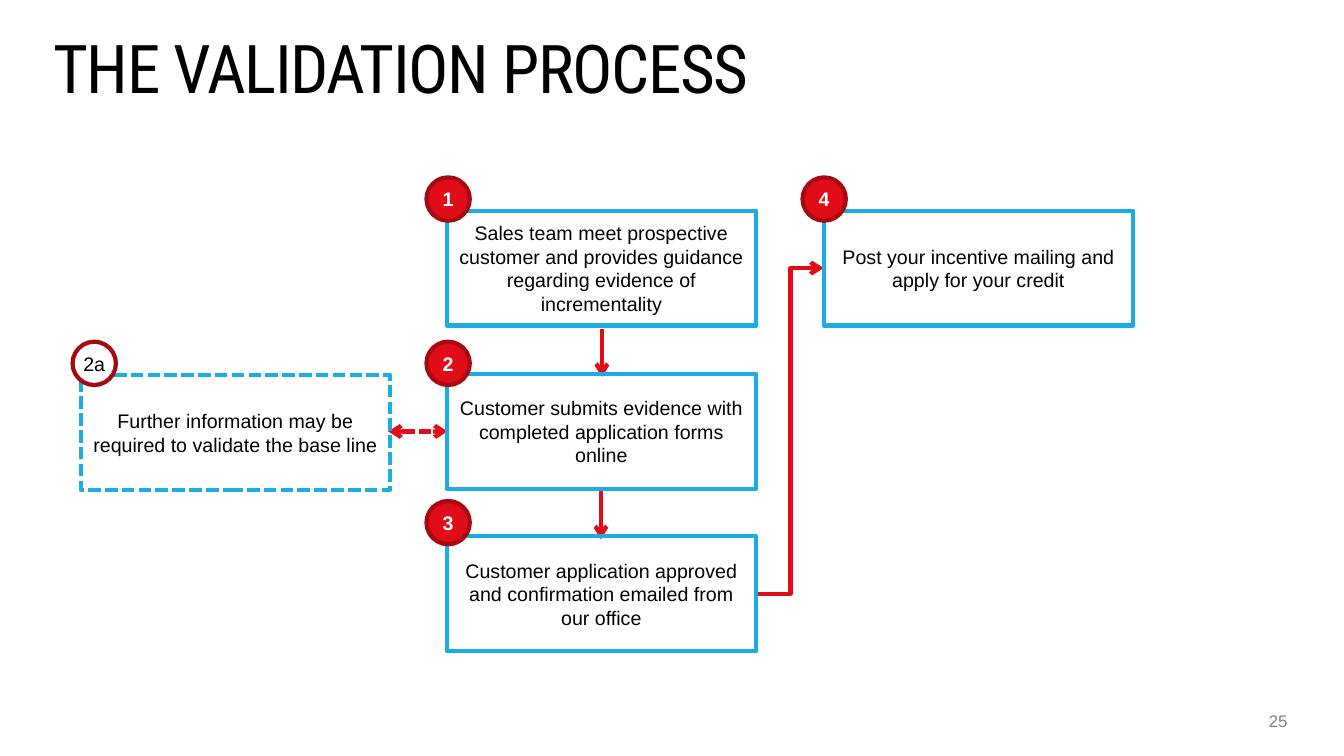
from dataclasses import dataclass

from lxml import etree
from pptx import Presentation
from pptx.dml.color import RGBColor
from pptx.enum.dml import MSO_LINE
from pptx.enum.shapes import MSO_CONNECTOR, MSO_SHAPE
from pptx.enum.text import MSO_ANCHOR, PP_ALIGN
from pptx.oxml.ns import qn
from pptx.util import Inches, Pt

COLORS = {
    "black": "000000",
    "white": "FFFFFF",
    "gray": "808080",
    "blue": "1BACE4",
    "red": "E20C18",
    "dark_red": "A70912",
}
BOX_WIDTH, BOX_HEIGHT, BADGE_SIZE = 3.07, 1.14, 0.43
LINE_WIDTH = Pt(3)


@dataclass
class Step:
    label: str
    text: str
    left: float
    top: float
    badge_left: float
    badge_top: float
    optional: bool = False


@dataclass
class Arrow:
    start: tuple[float, float]
    end: tuple[float, float]
    kind: MSO_CONNECTOR = MSO_CONNECTOR.STRAIGHT
    two_way: bool = False


STEPS = [
    Step("1", "Sales team meet prospective customer and provides guidance "
         "regarding evidence of incrementality", 4.43, 2.09, 4.23, 1.76),
    Step("2", "Customer submits evidence with completed application forms online",
         4.43, 3.71, 4.23, 3.39),
    Step("3", "Customer application approved and confirmation emailed from our office",
         4.43, 5.32, 4.23, 4.97),
    Step("2a", "Further information may be required to validate the base line",
         0.8, 3.72, 0.72, 3.39, optional=True),
    Step("4", "Post your incentive mailing and apply for your credit",
         8.17, 2.09, 7.96, 1.76),
]
ARROWS = [
    Arrow((5.97, 3.26), (5.97, 3.74)),
    Arrow((5.96, 4.86), (5.96, 5.35)),
    Arrow((3.85, 4.28), (4.44, 4.28), two_way=True),
    Arrow((7.51, 5.89), (8.17, 2.66), MSO_CONNECTOR.ELBOW),
]


def color(name: str) -> RGBColor:
    return RGBColor.from_string(COLORS[name])


def write(box, text: str, size: int, ink: str, align: PP_ALIGN,
          font: str = "Arial", bold: bool = False):
    frame = box.text_frame
    frame.word_wrap = True
    para = frame.paragraphs[0]
    para.text = text
    para.alignment = align
    para.font.name = font
    para.font.size = Pt(size)
    para.font.bold = bold
    para.font.color.rgb = color(ink)
    return para


def add_label(page, left: float, top: float, width: float, height: float):
    box = page.shapes.add_textbox(Inches(left), Inches(top), Inches(width), Inches(height))
    frame = box.text_frame
    frame.margin_left = frame.margin_right = frame.margin_top = frame.margin_bottom = 0
    return box


def add_outlined(page, kind: MSO_SHAPE, left: float, top: float, width: float,
                 height: float, outline: str):
    shape = page.shapes.add_shape(kind, Inches(left), Inches(top), Inches(width), Inches(height))
    shape.shadow.inherit = False
    shape.line.color.rgb = color(outline)
    shape.line.width = LINE_WIDTH
    shape.text_frame.vertical_anchor = MSO_ANCHOR.MIDDLE
    return shape


def add_step(page, step: Step) -> None:
    box = add_outlined(page, MSO_SHAPE.RECTANGLE, step.left, step.top,
                       BOX_WIDTH, BOX_HEIGHT, "blue")
    box.fill.background()
    write(box, step.text, 14, "black", PP_ALIGN.CENTER)
    badge = add_outlined(page, MSO_SHAPE.OVAL, step.badge_left, step.badge_top,
                         BADGE_SIZE, BADGE_SIZE, "dark_red")
    badge.fill.solid()
    badge.fill.fore_color.rgb = color("white" if step.optional else "red")
    badge.text_frame.margin_left = badge.text_frame.margin_right = 0
    write(badge, step.label, 14, "black" if step.optional else "white",
          PP_ALIGN.CENTER, bold=not step.optional)
    if step.optional:
        box.line.dash_style = MSO_LINE.SQUARE_DOT


def add_arrow(page, arrow: Arrow) -> None:
    points = [Inches(value) for value in (*arrow.start, *arrow.end)]
    connector = page.shapes.add_connector(arrow.kind, *points)
    connector.line.color.rgb = color("red")
    connector.line.width = LINE_WIDTH
    if arrow.two_way:
        connector.line.dash_style = MSO_LINE.SQUARE_DOT
    properties = connector.element.spPr
    outline = properties.find(qn("a:ln"))
    for end in ("a:headEnd", "a:tailEnd") if arrow.two_way else ("a:tailEnd",):
        etree.SubElement(outline, qn(end), type="arrow")
    etree.SubElement(properties, qn("a:effectLst"))


def main() -> None:
    """Build the validation process slide."""
    deck = Presentation()
    deck.slide_width, deck.slide_height = Inches(13.33), Inches(7.5)
    page = deck.slides.add_slide(deck.slide_layouts[6])

    title = write(add_label(page, 0.53, 0.45, 12.2, 0.52), "THE VALIDATION PROCESS",
                  48, "black", PP_ALIGN.LEFT, font="Roboto Condensed")
    title.line_spacing = Pt(44)
    for span in title.runs:
        span.font._element.set("spc", "-100")
    write(add_label(page, 12.3, 7.05, 0.47, 0.2), "25", 12, "gray", PP_ALIGN.RIGHT)

    for arrow in ARROWS:
        add_arrow(page, arrow)
    for step in STEPS:
        add_step(page, step)
    deck.save("out.pptx")


if __name__ == "__main__":
    main()
